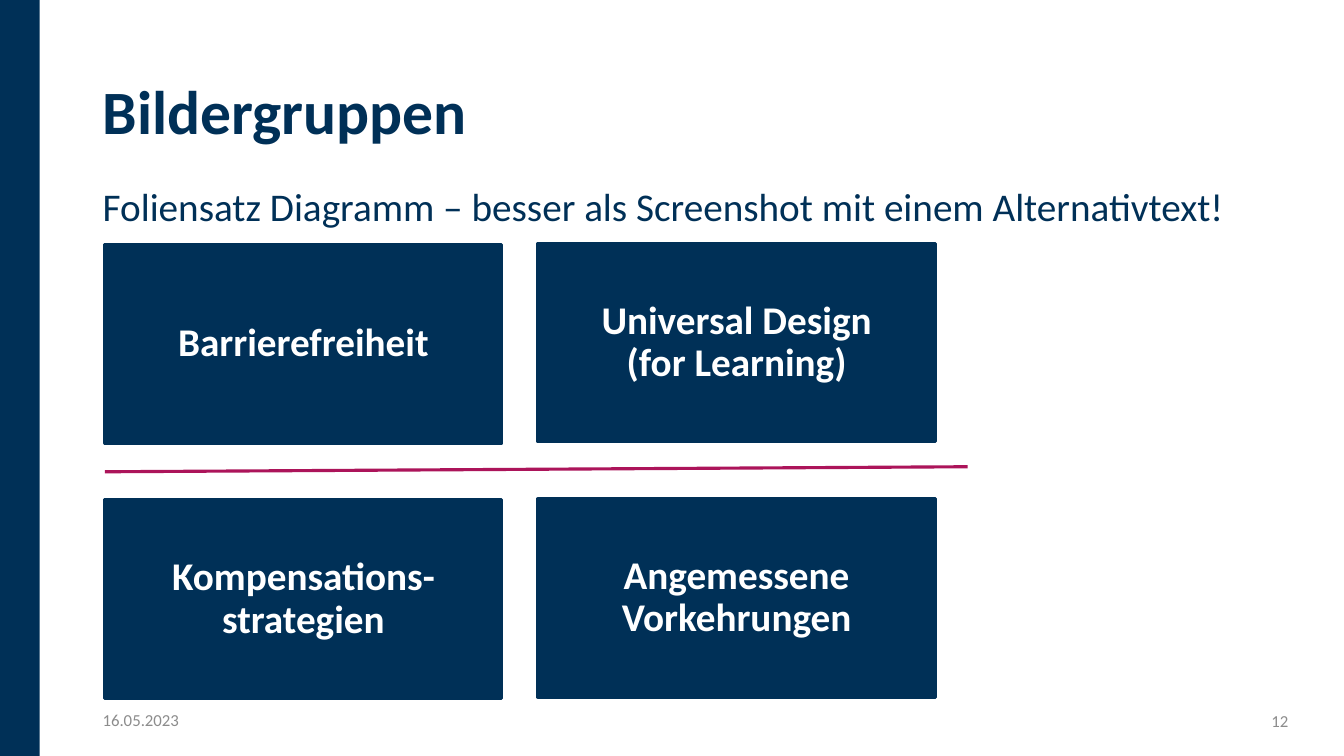
from lxml.etree import SubElement
from pptx import Presentation
from pptx.dml.color import RGBColor
from pptx.enum.shapes import MSO_CONNECTOR as Line, MSO_SHAPE as Shape
from pptx.enum.text import MSO_ANCHOR as Anchor, PP_ALIGN as Align
from pptx.oxml.ns import qn
from pptx.util import Pt

COLORS = {"navy": "003057", "berry": "AC145A", "gray": "8C8C8C", "white": "FFFFFF"}
FONT = "Calibri"


def rgb(name):
    """Return the palette colour with this name."""
    return RGBColor.from_string(COLORS[name])


def write(tf, text, size=28, color="navy", bold=False, align=Align.LEFT,
          anchor=Anchor.MIDDLE, spacing=1.0, before=0, inset=None):
    """Fill a text frame with one formatted paragraph."""
    tf.word_wrap = True
    tf.vertical_anchor = anchor
    if inset is not None:
        tf.margin_left = tf.margin_right = tf.margin_top = tf.margin_bottom = Pt(inset)
    p = tf.paragraphs[0]
    p.alignment, p.line_spacing, p.space_before = align, spacing, Pt(before)
    for i, line in enumerate(text.split("\n")):
        if i:
            p.add_line_break()
        r = p.add_run()
        r.text = line
        r.font.name, r.font.size, r.font.bold = FONT, Pt(size), bold
        r.font.color.rgb = rgb(color)
    return p


class Deck:
    """Hold the presentation, its style and the current slide."""

    def __init__(self, width, height):
        """Start a presentation with one title and body slide."""
        self.prs = Presentation()
        self.prs.slide_width, self.prs.slide_height = Pt(width), Pt(height)
        self.s = self.prs.slides.add_slide(self.prs.slide_layouts[1])

    def placeholder(self, idx, x, y, w, h, text, **fmt):
        """Move a placeholder and write unbulleted text in it."""
        sp = self.s.placeholders[idx]
        sp.left, sp.top, sp.width, sp.height = Pt(x), Pt(y), Pt(w), Pt(h)
        p = write(sp.text_frame, text, **fmt)
        pPr = p._p.get_or_add_pPr()
        pPr.set("marL", "0")
        pPr.set("indent", "0")
        SubElement(pPr, qn("a:buNone"))

    def box(self, x, y, w, h, text="", border=0):
        """Draw a navy rectangle with optional centred text."""
        sp = self.s.shapes.add_shape(Shape.RECTANGLE, Pt(x), Pt(y), Pt(w), Pt(h))
        sp.shadow.inherit = False
        sp.fill.solid()
        sp.fill.fore_color.rgb = rgb("navy")
        if border:
            sp.line.color.rgb = rgb("navy")
            sp.line.width = Pt(border)
        else:
            sp.line.fill.background()
        if text:
            write(sp.text_frame, text, color="white", bold=True,
                  align=Align.CENTER, spacing=0.9, inset=10)

    def line(self, x1, y1, x2, y2):
        """Draw a plain berry line."""
        c = self.s.shapes.add_connector(Line.STRAIGHT, Pt(x1), Pt(y1), Pt(x2), Pt(y2))
        c.line.color.rgb = rgb("berry")
        c.line.width = Pt(2.25)
        SubElement(c._element.spPr, qn("a:effectLst"))

    def footer(self, x, y, text, align):
        """Write a small gray footer text."""
        sp = self.s.shapes.add_textbox(Pt(x), Pt(y), Pt(216), Pt(28.8))
        write(sp.text_frame, text, size=12, color="gray", align=align)


def main():
    """Build and save the slide."""
    deck = Deck(960, 540)
    deck.box(0, 0, 28.3, 540)
    deck.placeholder(0, 66.2, 29.5, 861.8, 104.4, "Bildergruppen",
                     size=44, bold=True, spacing=0.9)
    deck.placeholder(1, 66.2, 123.8, 861.8, 63.4,
                     "Foliensatz Diagramm – besser als Screenshot mit einem Alternativtext!",
                     anchor=Anchor.TOP, spacing=1.08, before=10)
    rows = [["Barrierefreiheit", "Universal Design\n(for Learning)"],
            ["Kompensations-strategien", "Angemessene Vorkehrungen"]]
    for i, row in enumerate(rows):
        for j, text in enumerate(row):
            deck.box(74.9 + j * 309.4, 174.7 + i * 182.4 - j * 0.8,
                     283.7, 141.8, text, border=2.25)
    deck.line(74.9, 337, 691.2, 333.4)
    deck.footer(711.4, 500.4, "12", Align.RIGHT)
    deck.footer(66.2, 499.7, "16.05.2023", Align.LEFT)
    deck.prs.save("out.pptx")


if __name__ == "__main__":
    main()
